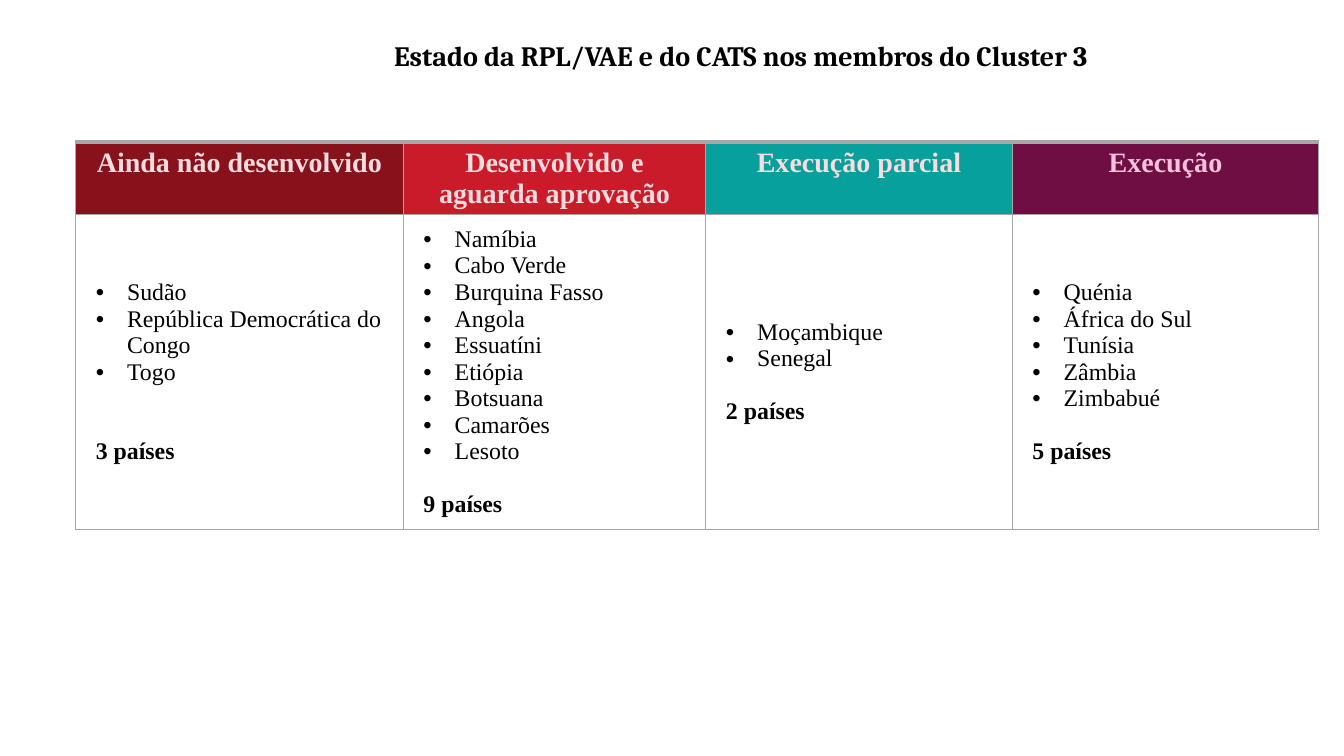
"""Build the slide on the state of RPL/VAE and CATS among the Cluster 3 members."""
from dataclasses import dataclass

import lxml.etree
import pptx
import pptx.dml.color
import pptx.enum.text
import pptx.oxml.ns
import pptx.util

Inches = pptx.util.Inches
Pt = pptx.util.Pt
Align = pptx.enum.text.PP_ALIGN
Anchor = pptx.enum.text.MSO_ANCHOR

SERIF = "Times New Roman"
BORDER = "A6A6A6"
LINE_HEIGHT = 18.8
ROW_HEIGHTS = (0.72, 3.12)


@dataclass(frozen=True)
class Stage:
    heading: str
    fill: str
    width: float
    countries: tuple[str, ...]
    heading_color: str = "FADBDE"
    gap_lines: int = 1


STAGES = (
    Stage("Ainda não desenvolvido", "87121C", 3.25,
          ("Sudão", "República Democrática do Congo", "Togo"), gap_lines=2),
    Stage("Desenvolvido e aguarda aprovação", "CA1B2B", 3,
          ("Namíbia", "Cabo Verde", "Burquina Fasso", "Angola", "Essuatíni",
           "Etiópia", "Botsuana", "Camarões", "Lesoto")),
    Stage("Execução parcial", "07A09C", 3.04, ("Moçambique", "Senegal")),
    Stage("Execução", "6F0E42", 3.04,
          ("Quénia", "África do Sul", "Tunísia", "Zâmbia", "Zimbabué"),
          heading_color="F7C2DF"),
)


def rgb(value: str) -> pptx.dml.color.RGBColor:
    return pptx.dml.color.RGBColor.from_string(value)


def add_child(parent, tag: str, **attributes: str):
    child = lxml.etree.SubElement(parent, pptx.oxml.ns.qn(tag))
    for name, value in attributes.items():
        child.set(name, value)
    return child


def style(paragraph, face: str, size: float, color: str, bold: bool) -> None:
    font = paragraph.font
    font.name, font.size, font.bold = face, Pt(size), bold
    font.color.rgb = rgb(color)


def finish_cell(cell, fill: str, top_width: float) -> None:
    properties = cell._tc.get_or_add_tcPr()
    for side, width in (("L", 1), ("R", 1), ("T", top_width), ("B", 1)):
        line = add_child(properties, f"a:ln{side}", w=str(Pt(width)))
        add_child(add_child(line, "a:solidFill"), "a:srgbClr", val=BORDER)
    cell.fill.solid()
    cell.fill.fore_color.rgb = rgb(fill)


def fill_heading(cell, stage: Stage) -> None:
    finish_cell(cell, stage.fill, 3)
    cell.vertical_anchor = Anchor.TOP
    paragraph = cell.text_frame.paragraphs[0]
    paragraph.text = stage.heading
    paragraph.alignment = Align.CENTER
    style(paragraph, SERIF, 20, stage.heading_color, True)


def fill_countries(cell, stage: Stage) -> None:
    finish_cell(cell, "FFFFFF", 1)
    cell.vertical_anchor = Anchor.MIDDLE
    cell.margin_left = Inches(0.2)
    frame = cell.text_frame
    frame.text = "\n".join(stage.countries + (f"{len(stage.countries)} países",))
    *items, total = frame.paragraphs
    for item in items:
        properties = item._p.get_or_add_pPr()
        properties.set("marL", str(Inches(0.31)))
        properties.set("indent", str(-Inches(0.31)))
        add_child(properties, "a:buFont", typeface="Arial")
        add_child(properties, "a:buChar", char="•")
        style(item, SERIF, 17, "000000", False)
    total.space_before = Pt(stage.gap_lines * LINE_HEIGHT)
    style(total, SERIF, 17, "000000", True)


def add_title(page) -> None:
    title = page.shapes.title
    title.left, title.top = Inches(1.96), Inches(0.33)
    title.width, title.height = Inches(10.78), Inches(0.44)
    frame = title.text_frame
    frame.text = "Estado da RPL/VAE e do CATS nos membros do Cluster 3"
    frame.word_wrap = True
    frame.vertical_anchor = Anchor.TOP
    paragraph = frame.paragraphs[0]
    paragraph.alignment = Align.CENTER
    style(paragraph, "Cambria", 20, "000000", True)


def add_stage_table(page) -> None:
    table = page.shapes.add_table(
        len(ROW_HEIGHTS), len(STAGES), Inches(0.75), Inches(1.41),
        Inches(sum(stage.width for stage in STAGES)),
        Inches(sum(ROW_HEIGHTS))).table
    table.first_row = table.horz_banding = False
    for row, height in zip(table.rows, ROW_HEIGHTS):
        row.height = Inches(height)
    for index, stage in enumerate(STAGES):
        table.columns[index].width = Inches(stage.width)
        fill_heading(table.cell(0, index), stage)
        fill_countries(table.cell(1, index), stage)


def main() -> None:
    deck = pptx.Presentation()
    deck.slide_width, deck.slide_height = Inches(13.33), Inches(7.5)
    page = deck.slides.add_slide(deck.slide_layouts.get_by_name("Title Only"))
    add_title(page)
    add_stage_table(page)
    deck.save("out.pptx")


if __name__ == "__main__":
    main()
